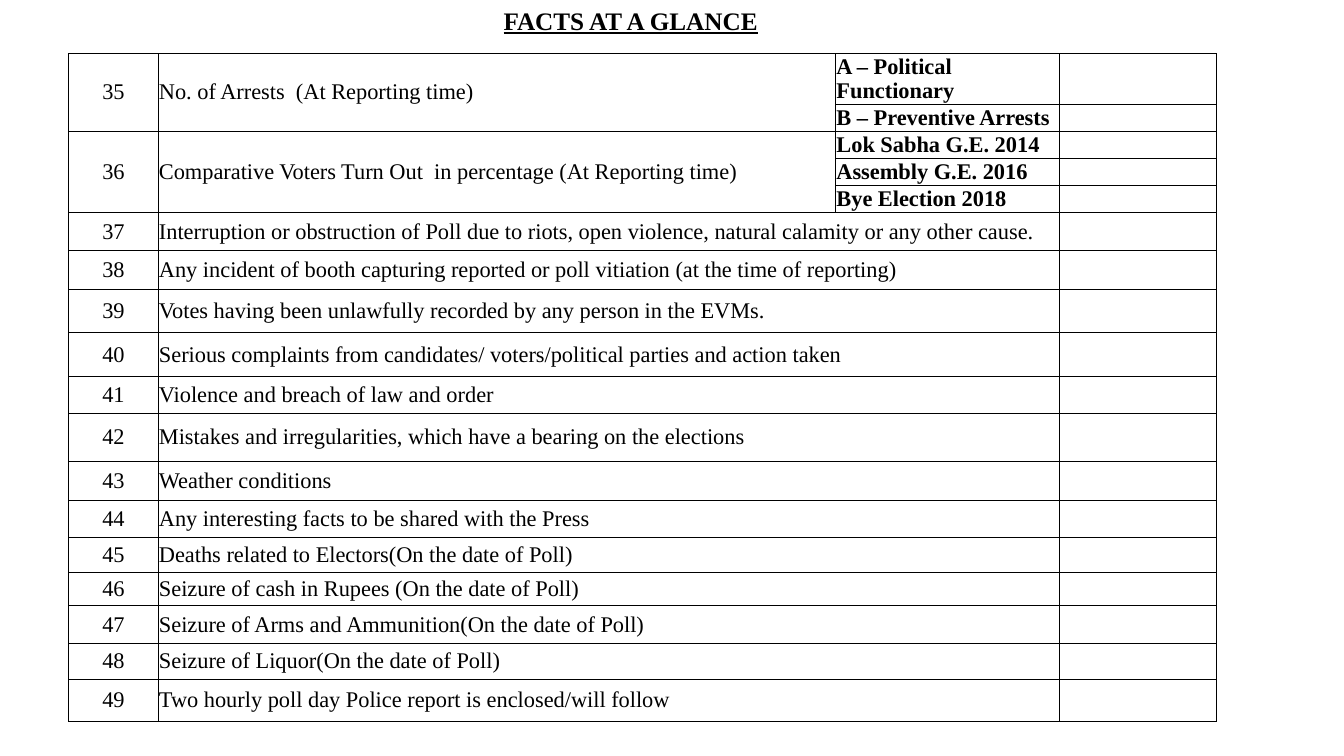
from dataclasses import dataclass

from lxml import etree
from pptx import Presentation
from pptx import util as u
from pptx.dml.color import RGBColor
from pptx.enum import text
from pptx.oxml import ns


@dataclass(frozen=True)
class Theme:
    font: str = "Times New Roman"
    ink: str = "000000"
    title: int = 18
    body: int = 16
    border: float = 0.5
    tight: float = 0.95


THEME = Theme()
FIRST_NUMBER = 35
COLUMNS = [0.89, 6.72, 2.22, 1.55]
SPLIT_FACTS = [
    ("No. of Arrests  (At Reporting time)",
     [("A – Political Functionary", 0.51), ("B – Preventive Arrests", 0.26)]),
    ("Comparative Voters Turn Out  in percentage (At Reporting time)",
     [("Lok Sabha G.E. 2014", 0.25), ("Assembly G.E. 2016", 0.26), ("Bye Election 2018", 0.25)]),
]
FACTS = [
    ("Interruption or obstruction of Poll due to riots, open violence, "
     "natural calamity or any other cause.", 0.38),
    ("Any incident of booth capturing reported or poll vitiation (at the time of reporting)", 0.38),
    ("Votes having been unlawfully recorded by any person in the EVMs.", 0.43),
    ("Serious complaints from candidates/ voters/political parties and action taken", 0.44),
    ("Violence and breach of law and order", 0.36),
    ("Mistakes and irregularities, which have a bearing on the elections", 0.48),
    ("Weather conditions", 0.39),
    ("Any interesting facts to be shared with the Press", 0.36),
    ("Deaths related to Electors(On the date of Poll)", 0.35),
    ("Seizure of cash in Rupees (On the date of Poll)", 0.33),
    ("Seizure of Arms and Ammunition(On the date of Poll)", 0.38),
    ("Seizure of Liquor(On the date of Poll)", 0.35),
    ("Two hourly poll day Police report is enclosed/will follow", 0.42),
]


def style(p, size, bold, align):
    p.alignment = align
    for r in p.runs:
        r.font.name = THEME.font
        r.font.size = u.Pt(size)
        r.font.bold = bold
        r.font.color.rgb = RGBColor.from_string(THEME.ink)


def add_borders(cell):
    tc_pr = cell._tc.get_or_add_tcPr()
    for side in ("a:lnL", "a:lnR", "a:lnT", "a:lnB"):
        ln = etree.SubElement(tc_pr, ns.qn(side), w=str(u.Pt(THEME.border)))
        fill = etree.SubElement(ln, ns.qn("a:solidFill"))
        etree.SubElement(fill, ns.qn("a:srgbClr"), val=THEME.ink)


prs = Presentation()
prs.slide_width, prs.slide_height = u.Inches(13.33), u.Inches(7.5)
s = prs.slides.add_slide(prs.slide_layouts[5])

title = s.shapes.title
title.left, title.top = u.Inches(4.88), u.Inches(0)
title.width, title.height = u.Inches(2.75), u.Inches(0.4)
tf = title.text_frame
tf.text = "FACTS AT A GLANCE"
tf.word_wrap = False
tf.auto_size = text.MSO_AUTO_SIZE.SHAPE_TO_FIT_TEXT
tf.vertical_anchor = text.MSO_ANCHOR.TOP
style(tf.paragraphs[0], THEME.title, True, text.PP_ALIGN.CENTER)
tf.paragraphs[0].runs[0].font.underline = True

split_heights = [height for _, parts in SPLIT_FACTS for _, height in parts]
heights = split_heights + [height for _, height in FACTS]
frame = s.shapes.add_table(len(heights), len(COLUMNS), u.Inches(0.68), u.Inches(0.53),
                           u.Inches(sum(COLUMNS)), u.Inches(sum(heights)))
table = frame.table
table.first_row = table.horz_banding = False
for column, width in zip(table.columns, COLUMNS):
    column.width = u.Inches(width)
for row, height in zip(table.rows, heights):
    row.height = u.Inches(height)

top = 0
for number, (fact, parts) in enumerate(SPLIT_FACTS, FIRST_NUMBER):
    for column, wording in enumerate([str(number), fact]):
        table.cell(top, column).merge(table.cell(top + len(parts) - 1, column))
        table.cell(top, column).text = wording
    for offset, (part, _) in enumerate(parts):
        table.cell(top + offset, 2).text = part
    top += len(parts)

for offset, (fact, _) in enumerate(FACTS):
    row = top + offset
    table.cell(row, 0).text = str(FIRST_NUMBER + len(SPLIT_FACTS) + offset)
    table.cell(row, 1).merge(table.cell(row, 2))
    table.cell(row, 1).text = fact

for row in range(len(heights)):
    for column in range(len(COLUMNS)):
        cell = table.cell(row, column)
        cell.margin_left = cell.margin_right = u.Pt(0.5)
        cell.margin_top = cell.margin_bottom = 0
        cell.vertical_anchor = text.MSO_ANCHOR.MIDDLE
        add_borders(cell)
        cell.fill.background()
        p = cell.text_frame.paragraphs[0]
        align = text.PP_ALIGN.CENTER if column == 0 else text.PP_ALIGN.LEFT
        style(p, THEME.body, column == 2, align)
        if row < len(split_heights):
            p.line_spacing = THEME.tight
        if not p.runs:
            end = etree.SubElement(p._p, ns.qn("a:endParaRPr"), sz=str(THEME.body * 100))
            etree.SubElement(end, ns.qn("a:latin"), typeface=THEME.font)

prs.save("out.pptx")
